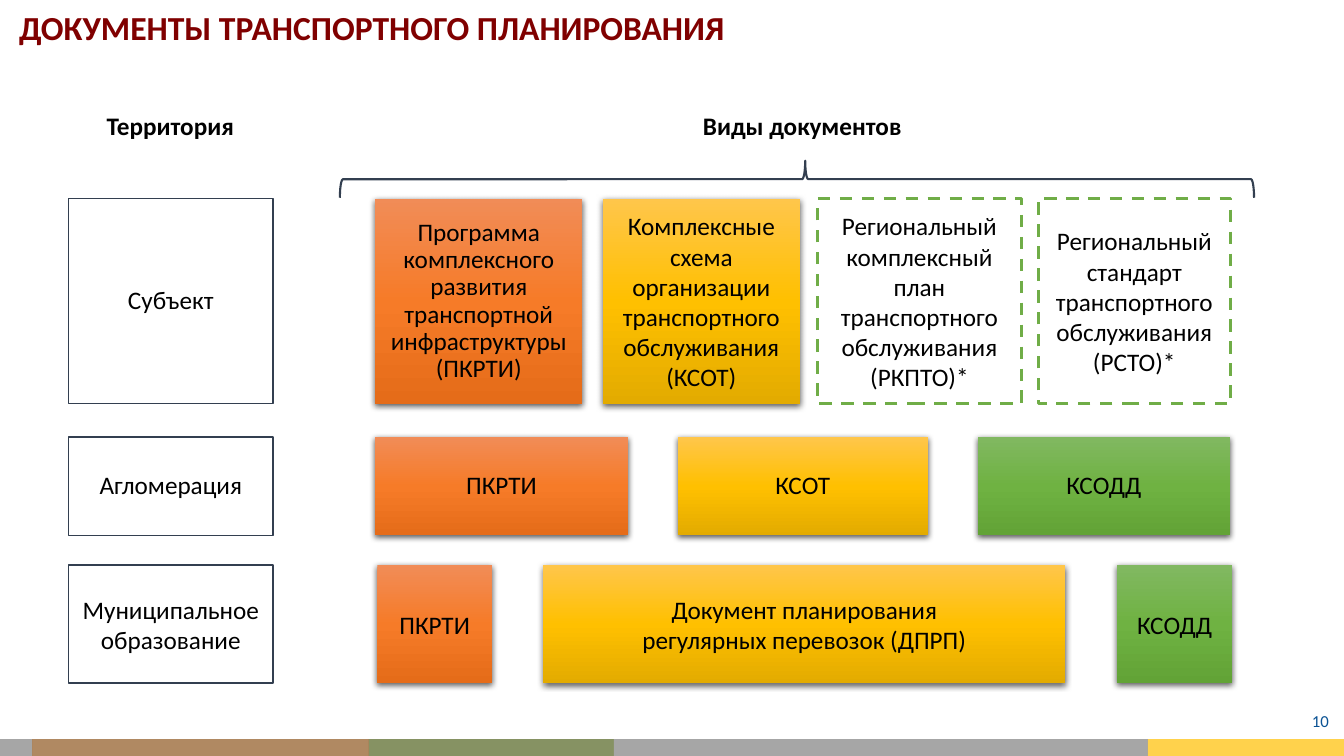
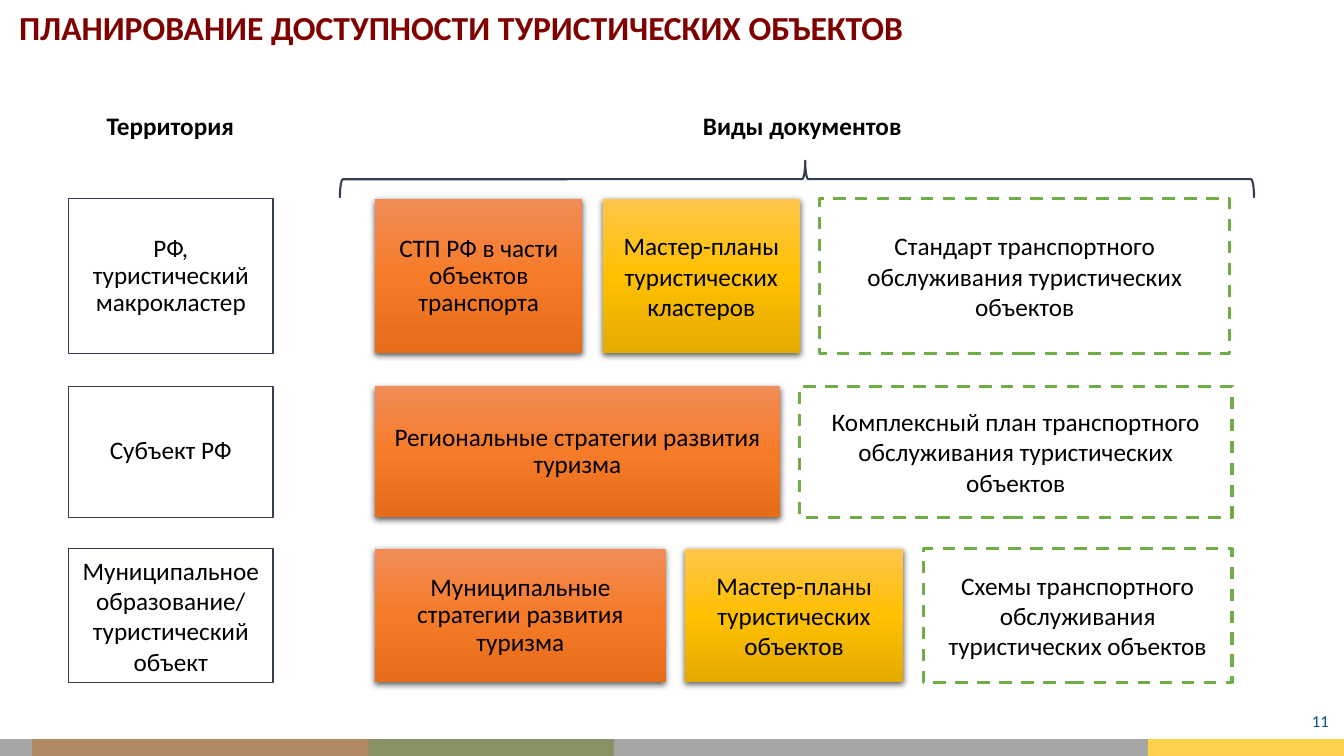
from copy import deepcopy
from dataclasses import dataclass
from typing import Optional

import lxml.etree
import pptx
import pptx.dml.color
import pptx.enum.dml
import pptx.enum.shapes
import pptx.enum.text
import pptx.oxml.ns
import pptx.util

Pt = pptx.util.Pt
qn = pptx.oxml.ns.qn
Kind = pptx.enum.shapes.MSO_SHAPE
Align = pptx.enum.text.PP_ALIGN
Anchor = pptx.enum.text.MSO_ANCHOR

FONT = "Calibri"
BLACK, WHITE, NAVY, GREEN = "000000", "FFFFFF", "333F50", "70AD47"
TITLE_COLOUR, NUMBER_COLOUR = "800000", "0B5394"
TERRITORY_LEFT, TERRITORY_WIDTH = 49, 146
SLIDE_WIDTH, SLIDE_HEIGHT, BAND_HEIGHT = 960, 540, 12
TIGHT = 0.9


@dataclass(frozen=True)
class Style:
    gradient: tuple[str, ...] = ()
    line: str = ""
    weight: float = 1
    dashed: bool = False


OUTLINE = Style(line=NAVY)
DASHED = Style(line=GREEN, weight=2.25, dashed=True)
ORANGE_FILL = Style(gradient=("F18C57", "F67B28", "E56C19"))
YELLOW_FILL = Style(gradient=("FFC64B", "FFC000", "E3AB00"))
GREEN_FILL = Style(gradient=("81B861", "6FB242", "62A336"))


@dataclass(frozen=True)
class Document:
    text: str
    left: float
    width: float
    style: Style
    spacing: Optional[float] = None


@dataclass(frozen=True)
class Row:
    territory: str
    top: float
    height: float
    documents: tuple[Document, ...]
    spacing: Optional[float] = TIGHT


@dataclass(frozen=True)
class Page:
    number: int
    title: str
    rows: tuple[Row, ...]


@dataclass(frozen=True)
class Band:
    width: float
    colour: str
    opacity: int = 100


BANDS = (
    Band(23, "A6A6A6"),
    Band(240.5, "996633", 77),
    Band(175, "546422", 70),
    Band(381.5, "A6A6A6"),
    Band(140, "FFC000", 70),
)

PAGES = (
    Page(10, "ДОКУМЕНТЫ ТРАНСПОРТНОГО ПЛАНИРОВАНИЯ", (
        Row("Субъект", 142, 146.5, (
            Document("Программа комплексного развития транспортной инфраструктуры (ПКРТИ)",
                     268, 148, ORANGE_FILL, TIGHT),
            Document("Комплексные схема организации транспортного обслуживания (КСОТ)",
                     430.5, 141, YELLOW_FILL),
            Document("Региональный комплексный план транспортного обслуживания (РКПТО)*",
                     584, 145.5, DASHED),
            Document("Региональный стандарт транспортного обслуживания (РСТО)*",
                     741.5, 137.5, DASHED),
        )),
        Row("Агломерация", 312, 70.5, (
            Document("ПКРТИ", 268, 180.5, ORANGE_FILL, TIGHT),
            Document("КСОТ", 484, 179, YELLOW_FILL, TIGHT),
            Document("КСОДД", 698.5, 180, GREEN_FILL, TIGHT),
        )),
        Row("Муниципальное образование", 403.5, 84.5, (
            Document("ПКРТИ", 269.5, 82, ORANGE_FILL),
            Document("Документ планирования\nрегулярных перевозок (ДПРП)",
                     388, 373, YELLOW_FILL),
            Document("КСОДД", 798, 82, GREEN_FILL),
        ), None),
    )),
    Page(11, "ПЛАНИРОВАНИЕ ДОСТУПНОСТИ ТУРИСТИЧЕСКИХ ОБЪЕКТОВ", (
        Row("РФ, туристический макрокластер", 142, 110.5, (
            Document("СТП РФ в части объектов транспорта", 268, 148, ORANGE_FILL, TIGHT),
            Document("Мастер-планы туристических кластеров", 430.5, 141, YELLOW_FILL),
            Document("Стандарт транспортного обслуживания туристических объектов",
                     585.5, 293, DASHED),
        )),
        Row("Субъект РФ", 276, 93.5, (
            Document("Региональные стратегии развития туризма", 268, 289, ORANGE_FILL, TIGHT),
            Document("Комплексный план транспортного обслуживания туристических объектов",
                     571, 309, DASHED),
        )),
        Row("Муниципальное образование/ туристический объект", 392, 95.5, (
            Document("Муниципальные стратегии развития туризма", 268, 207.5, ORANGE_FILL, TIGHT),
            Document("Мастер-планы туристических объектов", 489.5, 155.5, YELLOW_FILL),
            Document("Схемы транспортного обслуживания туристических объектов",
                     659.5, 220.5, DASHED),
        ), None),
    )),
)


def rgb(colour: str) -> pptx.dml.color.RGBColor:
    return pptx.dml.color.RGBColor.from_string(colour)


def write(frame, text: str, *, size: float = 18, colour: str = BLACK, bold: bool = False,
          align=Align.LEFT, anchor=Anchor.TOP, spacing=None, wrap: bool = True) -> None:
    """Fill a text frame with one formatted paragraph; a newline is a line break."""
    frame.word_wrap = wrap
    frame.vertical_anchor = anchor
    para = frame.paragraphs[0]
    para.text = text.replace("\n", "\v")
    para.alignment = align
    if spacing is not None:
        para.line_spacing = spacing
    for span in para.runs:
        span.font.name = FONT
        span.font.size = Pt(size)
        span.font.bold = bold
        span.font.color.rgb = rgb(colour)


def add_label(slide, text: str, left: float, top: float, width: float, height: float,
              **text_format) -> None:
    box = slide.shapes.add_textbox(Pt(left), Pt(top), Pt(width), Pt(height))
    write(box.text_frame, text, **text_format)


def add_plain_shape(slide, kind, left: float, top: float, width: float, height: float):
    """Add a preset shape with no shadow, fill or line."""
    shape = slide.shapes.add_shape(kind, Pt(left), Pt(top), Pt(width), Pt(height))
    shape.shadow.inherit = False
    shape.fill.background()
    shape.line.fill.background()
    return shape


def fill_gradient(shape, colours: tuple[str, ...]) -> None:
    """Fill from top to bottom with evenly spaced colours."""
    shape.fill.gradient()
    shape.fill.gradient_angle = 270
    stops = shape.element.spPr.find(f"{qn('a:gradFill')}/{qn('a:gsLst')}")
    while len(stops) < len(colours):
        stops.append(deepcopy(stops[0]))
    for index, (stop, colour) in enumerate(zip(shape.fill.gradient_stops, colours)):
        stop.position = index / (len(colours) - 1)
        stop.color.rgb = rgb(colour)


def add_opacity(colour_element, percent: int) -> None:
    lxml.etree.SubElement(colour_element, qn("a:alpha"), val=str(percent * 1000))


def add_shadow(shape) -> None:
    effects = shape.element.spPr.find(qn("a:effectLst"))
    shadow = lxml.etree.SubElement(
        effects, qn("a:outerShdw"), blurRad=str(int(Pt(4.5))), dist=str(int(Pt(1.5))),
        dir="5400000", algn="ctr", rotWithShape="0")
    add_opacity(lxml.etree.SubElement(shadow, qn("a:srgbClr"), val=BLACK), 63)


def add_box(slide, text: str, left: float, top: float, width: float, height: float,
            style: Style, spacing: Optional[float]) -> None:
    box = add_plain_shape(slide, Kind.RECTANGLE, left, top, width, height)
    if style.gradient:
        fill_gradient(box, style.gradient)
        add_shadow(box)
    else:
        box.fill.solid()
        box.fill.fore_color.rgb = rgb(WHITE)
        box.line.color.rgb = rgb(style.line)
        box.line.width = Pt(style.weight)
        if style.dashed:
            box.line.dash_style = pptx.enum.dml.MSO_LINE.DASH
    write(box.text_frame, text, align=Align.CENTER, anchor=Anchor.MIDDLE, spacing=spacing)


def add_footer(slide, number: int) -> None:
    add_label(slide, str(number), 930, 504, 30, 22, size=12, colour=NUMBER_COLOUR, wrap=False)
    left = 0.0
    for band in BANDS:
        strip = add_plain_shape(slide, Kind.RECTANGLE, left, SLIDE_HEIGHT - BAND_HEIGHT,
                                band.width, BAND_HEIGHT)
        strip.fill.solid()
        strip.fill.fore_color.rgb = rgb(band.colour)
        if band.opacity < 100:
            add_opacity(strip.element.spPr.find(f"{qn('a:solidFill')}/{qn('a:srgbClr')}"),
                        band.opacity)
        left += band.width


def add_headings(slide) -> None:
    """Add both column headings and the brace over the documents."""
    add_label(slide, "Территория", 69, 75, 126, 29, bold=True)
    add_label(slide, "Виды документов", 495, 75, 203, 29, bold=True)
    brace = add_plain_shape(slide, Kind.LEFT_BRACE, 556, -198.5, 26.5, 653)
    brace.rotation = 90
    brace.adjustments[0] = 0.083
    brace.adjustments[1] = 0.491
    brace.line.color.rgb = rgb(NAVY)
    brace.line.width = Pt(1.5)


def add_page(deck, page: Page) -> None:
    slide = deck.slides.add_slide(deck.slide_layouts[6])
    add_footer(slide, page.number)
    add_label(slide, page.title, 6.5, 8, 746.5, 30, size=24, colour=TITLE_COLOUR,
              bold=True, spacing=Pt(22))
    add_headings(slide)
    for row in page.rows:
        territory = Document(row.territory, TERRITORY_LEFT, TERRITORY_WIDTH, OUTLINE, row.spacing)
        for cell in (territory, *row.documents):
            add_box(slide, cell.text, cell.left, row.top, cell.width, row.height,
                    cell.style, cell.spacing)


def main() -> None:
    deck = pptx.Presentation()
    deck.slide_width = Pt(SLIDE_WIDTH)
    deck.slide_height = Pt(SLIDE_HEIGHT)
    for page in PAGES:
        add_page(deck, page)
    deck.save("out.pptx")


if __name__ == "__main__":
    main()
